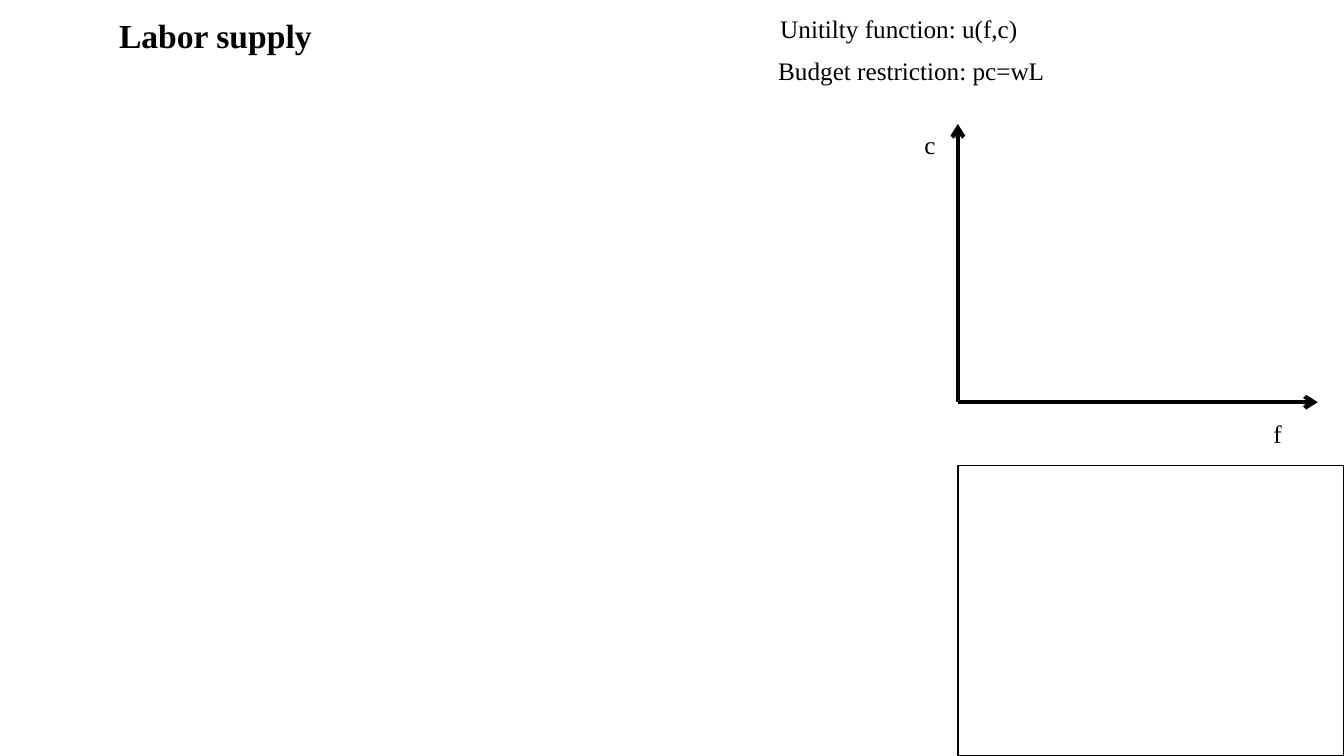
from lxml import etree
from pptx import Presentation
from pptx.dml.color import RGBColor
from pptx.enum.shapes import MSO_CONNECTOR, MSO_SHAPE
from pptx.enum.text import MSO_ANCHOR, MSO_AUTO_SIZE, PP_ALIGN
from pptx.oxml.ns import qn
from pptx.util import Inches, Pt

BLACK = RGBColor(0, 0, 0)
FONT = "Times New Roman"
STRAIGHT = MSO_CONNECTOR.STRAIGHT
RECTANGLE = MSO_SHAPE.RECTANGLE
TOP = MSO_ANCHOR.TOP
LEFT = PP_ALIGN.LEFT
FIT_SHAPE = MSO_AUTO_SIZE.SHAPE_TO_FIT_TEXT
ORIGIN = (9.5, 3.99)


def write(s, text, size, wrap=False, bold=False):
    tf = s.text_frame
    tf.word_wrap = wrap
    tf.auto_size = FIT_SHAPE
    tf.vertical_anchor = TOP
    tf.text = text
    p = tf.paragraphs[0]
    p.alignment = LEFT
    p.font.name = FONT
    p.font.size = Pt(size)
    p.font.bold = bold
    p.font.color.rgb = BLACK


prs = Presentation()
prs.slide_width = Inches(13.33)
prs.slide_height = Inches(7.5)
slide = prs.slides.add_slide(prs.slide_layouts[5])

# Title
title = slide.shapes.title
title.left, title.top = Inches(1.09), Inches(0.11)
title.width, title.height = Inches(2.11), Inches(0.48)
write(title, "Labor supply", 24, bold=True)
tf = title.text_frame
tf.margin_left = tf.margin_right = Inches(0.09)
tf.margin_top = tf.margin_bottom = Inches(0.04)

# Empty frame below the diagram
frame = slide.shapes.add_shape(RECTANGLE, Inches(9.5), Inches(4.62), Inches(3.83), Inches(2.88))
frame.shadow.inherit = False
frame.fill.background()
frame.line.color.rgb = BLACK
frame.line.width = Pt(1)

# Axes
for end in [(13.07, 3.99), (9.5, 1.23)]:
    axis = slide.shapes.add_connector(STRAIGHT, *map(Inches, ORIGIN + end))
    axis.line.color.rgb = BLACK
    axis.line.width = Pt(3)
    etree.SubElement(axis.line._get_or_add_ln(), qn("a:tailEnd"), type="arrow")
    etree.SubElement(axis._element.spPr, qn("a:effectLst"))

# Axis labels and equations
for text, left, top, width, wrap in [
    ("c", 9.07, 1.23, 0.87, True),
    ("f", 12.53, 4.1, 0.28, False),
    ("Budget restriction: pc=wL", 7.62, 0.5, 2.87, False),
    ("Unitilty function: u(f,c)", 7.64, 0.08, 2.58, False),
]:
    box = slide.shapes.add_textbox(Inches(left), Inches(top), Inches(width), Inches(0.4))
    write(box, text, 18, wrap)

prs.save("out.pptx")
